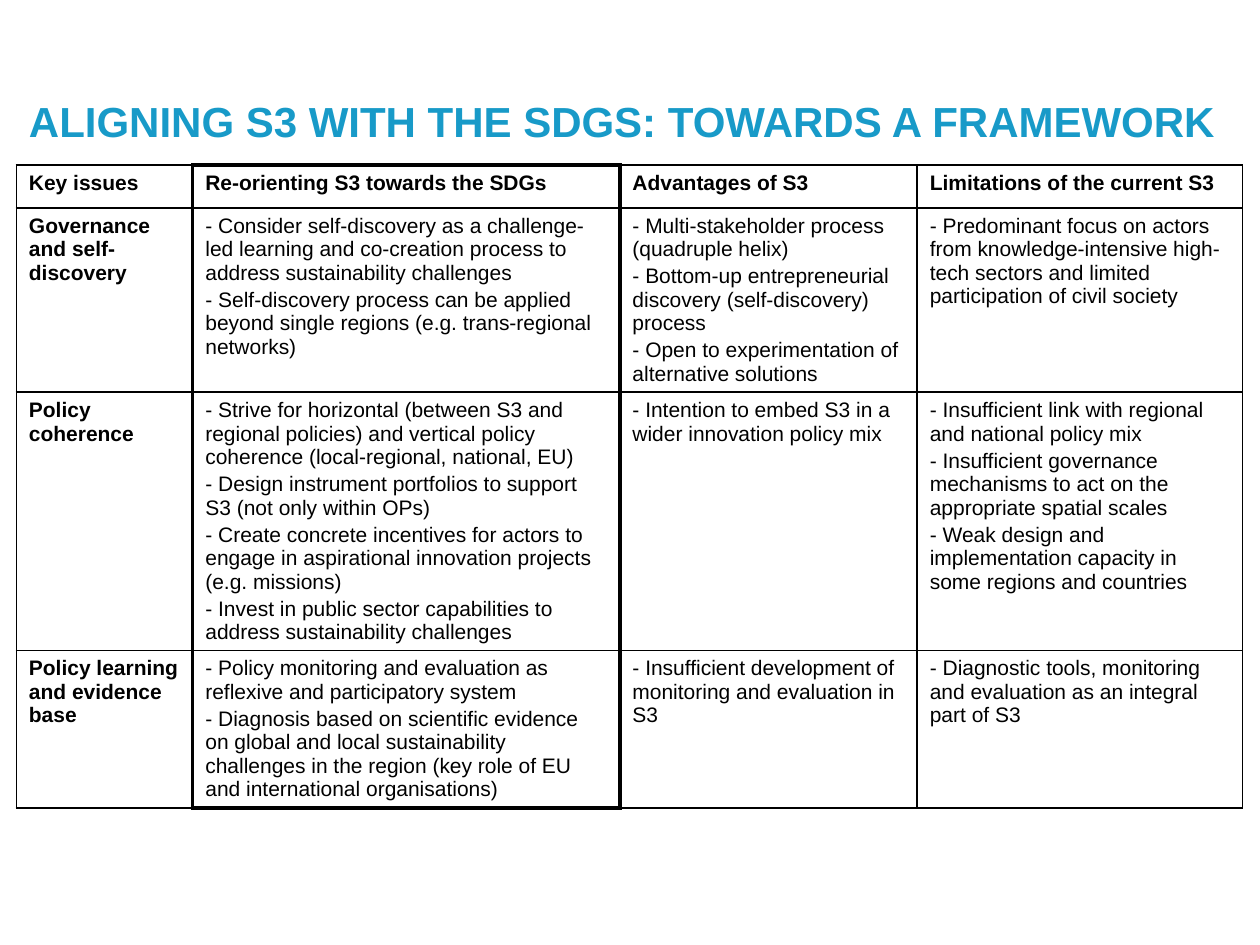
from lxml import etree
from pptx import Presentation
from pptx import util as u
from pptx.dml.color import RGBColor
from pptx.enum import text
from pptx.oxml import ns

COLORS = {"title": "189AC8", "ink": "000000"}
FONT = "Arial"
THIN, THICK = 1, 2.25


def style_runs(paragraph, size, color, bold):
    for run in paragraph.runs:
        run.font.name = FONT
        run.font.size = u.Pt(size)
        run.font.bold = bold
        run.font.color.rgb = RGBColor.from_string(COLORS[color])


def add_border(cell, side, width):
    line = etree.SubElement(cell._tc.get_or_add_tcPr(), ns.qn(f"a:ln{side}"), w=str(u.Pt(width)))
    fill = etree.SubElement(line, ns.qn("a:solidFill"))
    etree.SubElement(fill, ns.qn("a:srgbClr"), val=COLORS["ink"])


prs = Presentation()
prs.slide_width, prs.slide_height = u.Inches(10), u.Inches(7.5)
slide = prs.slides.add_slide(prs.slide_layouts[5])

heading = slide.shapes.title
heading.left, heading.top = u.Inches(0.13), u.Inches(0.71)
heading.width, heading.height = u.Inches(9.65), u.Inches(0.71)
heading.text_frame.text = "ALIGNING S3 WITH THE SDGS: TOWARDS A FRAMEWORK"
heading.text_frame.auto_size = text.MSO_AUTO_SIZE.NONE
heading.text_frame.vertical_anchor = text.MSO_ANCHOR.TOP
heading.text_frame.paragraphs[0].alignment = text.PP_ALIGN.LEFT
style_runs(heading.text_frame.paragraphs[0], 24, "title", True)

framework = [
    ["Key issues", "Re-orienting S3 towards the SDGs", "Advantages of S3", "Limitations of the current S3"],
    [
        "Governance and self-discovery",
        "- Consider self-discovery as a challenge-led learning and co-creation process to "
        "address sustainability challenges\n"
        "- Self-discovery process can be applied beyond single regions (e.g. trans-regional networks)",
        "- Multi-stakeholder process (quadruple helix)\n"
        "- Bottom-up entrepreneurial discovery (self-discovery) process\n"
        "- Open to experimentation of alternative solutions",
        "- Predominant focus on actors from knowledge-intensive high-tech sectors and limited "
        "participation of civil society",
    ],
    [
        "Policy coherence",
        "- Strive for horizontal (between S3 and regional policies) and vertical policy coherence "
        "(local-regional, national, EU)\n"
        "- Design instrument portfolios to support S3 (not only within OPs)\n"
        "- Create concrete incentives for actors to engage in aspirational innovation projects "
        "(e.g. missions)\n"
        "- Invest in public sector capabilities to address sustainability challenges",
        "- Intention to embed S3 in a wider innovation policy mix",
        "- Insufficient link with regional and national policy mix\n"
        "- Insufficient governance mechanisms to act on the appropriate spatial scales\n"
        "- Weak design and implementation capacity in some regions and countries",
    ],
    [
        "Policy learning and evidence base",
        "- Policy monitoring and evaluation as reflexive and participatory system\n"
        "- Diagnosis based on scientific evidence on global and local sustainability challenges "
        "in the region (key role of EU and international organisations)",
        "- Insufficient development of monitoring and evaluation in S3",
        "- Diagnostic tools, monitoring and evaluation as an integral part of S3",
    ],
]
column_widths = [1.4, 3.39, 2.36, 2.58]
row_heights = [0.34, 1.46, 2.05, 1.25]

grid = slide.shapes.add_table(
    len(row_heights), len(column_widths), u.Inches(0.13), u.Inches(1.31),
    u.Inches(sum(column_widths)), u.Inches(sum(row_heights))).table
grid.first_row = grid.horz_banding = False
for column, width in zip(grid.columns, column_widths):
    column.width = u.Inches(width)
for row, height in zip(grid.rows, row_heights):
    row.height = u.Inches(height)

focus_column = 1
last_row = len(framework) - 1
for r, issue in enumerate(framework):
    for c, wording in enumerate(issue):
        cell = grid.cell(r, c)
        in_focus = c == focus_column
        add_border(cell, "L", THICK if c in (focus_column, focus_column + 1) else THIN)
        add_border(cell, "R", THICK if c in (focus_column - 1, focus_column) else THIN)
        add_border(cell, "T", THICK if in_focus and r == 0 else THIN)
        add_border(cell, "B", THICK if in_focus and r == last_row else THIN)
        cell.fill.background()
        cell.text_frame.text = wording
        for paragraph in cell.text_frame.paragraphs:
            paragraph.space_after = u.Pt(2)
            style_runs(paragraph, 12, "ink", r == 0 or c == 0)

prs.save("out.pptx")
